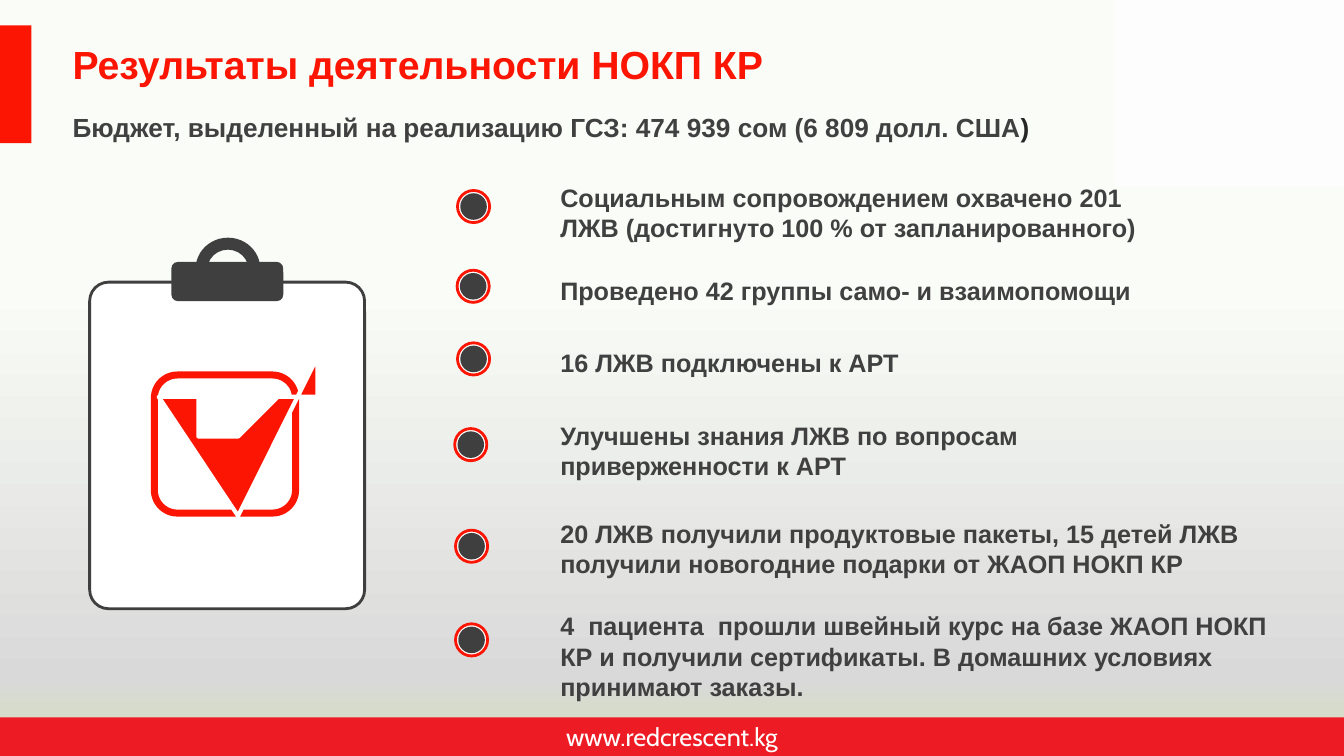
from lxml import etree
from pptx import Presentation
from pptx.dml.color import RGBColor
from pptx.enum.shapes import MSO_SHAPE
from pptx.enum.text import MSO_ANCHOR, PP_ALIGN
from pptx.oxml.ns import qn
from pptx.util import Cm, Pt

RECTANGLE = MSO_SHAPE.RECTANGLE
ROUNDED = MSO_SHAPE.ROUNDED_RECTANGLE
ARC = MSO_SHAPE.BLOCK_ARC
OVAL = MSO_SHAPE.OVAL
TOP, MIDDLE = MSO_ANCHOR.TOP, MSO_ANCHOR.MIDDLE
CENTER = PP_ALIGN.CENTER

RED = RGBColor(0xFB, 0x15, 0x02)
FOOTER_RED = RGBColor(0xED, 0x1C, 0x24)
DARK = RGBColor(0x3F, 0x3F, 0x3F)
TEXT_GRAY = RGBColor(0x40, 0x40, 0x40)
BRACKET_GRAY = RGBColor(0x26, 0x26, 0x26)
WHITE = RGBColor(0xFF, 0xFF, 0xFF)
CORNER_WHITE = RGBColor(0xFD, 0xFD, 0xFD)

BACKGROUND_STOPS = [(38, "FAFCF7"), (90, "D9D9D9"), (100, "D2E0B4"), (100, "BFBFBF")]

TITLE = "Результаты деятельности НОКП КР"
BUDGET = "Бюджет, выделенный на реализацию ГСЗ: 474 939 сом (6 809 долл. США"
WEBSITE = "www.redcrescent.kg"

# text, text top, text width, text height, ring left, ring top (cm)
RESULTS = [
    ("Социальным сопровождением охвачено 201 ЛЖВ (достигнуто 100 % от запланированного)",
     4.42, 16.26, 1.7, 11.53, 4.8),
    ("Проведено 42 группы само- и взаимопомощи", 6.76, 16.26, 1.7, 11.52, 6.81),
    ("16 ЛЖВ подключены к АРТ", 8.56, 16.26, 1.7, 11.53, 8.64),
    ("Улучшены знания ЛЖВ по вопросам приверженности к АРТ",
     10.41, 16.26, 1.7, 11.46, 10.8),
    ("20 ЛЖВ получили продуктовые пакеты, 15 детей ЛЖВ получили новогодние подарки "
     "от ЖАОП НОКП КР", 12.88, 19.15, 2.57, 11.48, 13.36),
    ("4  пациента  прошли швейный курс на базе ЖАОП НОКП КР и получили сертификаты. "
     "В домашних условиях принимают заказы.", 15.21, 19.25, 2.57, 11.48, 15.72),
]
RESULT_LEFT = 13.79
RING_SIZE, DOT_SIZE = 0.81, 0.67

# Bezier control points of the tick (cm)
TICK_RIGHT = [(5.72, 11.2), (6.32, 10.59), (8.15, 9.27), (8.38, 9.47)]
TICK_BOTTOM = (5.66, 12.64)
TICK_LEFT = [(4.14, 10.21), (4.52, 10.11), (5.18, 10.72), (5.72, 11.2)]
CURVE_STEPS = 16


def paint(shape, fill, line=None, line_width=0):
    shape.shadow.inherit = False
    shape.fill.solid()
    shape.fill.fore_color.rgb = fill
    if line is None:
        shape.line.fill.background()
    else:
        shape.line.color.rgb = line
        shape.line.width = Pt(line_width)


def add_figure(slide, kind, box, fill, line=None, line_width=0, adjustments=()):
    shape = slide.shapes.add_shape(kind, *map(Cm, box))
    for index, value in enumerate(adjustments):
        shape.adjustments[index] = value
    paint(shape, fill, line, line_width)
    return shape


def format_run(run, size, color, font="Arial", bold=True):
    run.font.name = font
    run.font.size = Pt(size)
    run.font.bold = bold
    run.font.color.rgb = color


def add_text(slide, box, text, size, color, anchor=TOP, vertical_inset=0.18):
    """Add a bold text box and return its paragraph."""
    frame = slide.shapes.add_textbox(*map(Cm, box)).text_frame
    frame.word_wrap = True
    frame.vertical_anchor = anchor
    frame.margin_left = frame.margin_right = Cm(0.33)
    frame.margin_top = frame.margin_bottom = Cm(vertical_inset)
    frame.text = text
    paragraph = frame.paragraphs[0]
    format_run(paragraph.runs[0], size, color)
    return paragraph


def curve_points(controls):
    """Return points along a cubic Bezier curve."""
    points = []
    for step in range(CURVE_STEPS + 1):
        t = step / CURVE_STEPS
        weights = ((1 - t) ** 3, 3 * t * (1 - t) ** 2, 3 * t * t * (1 - t), t ** 3)
        points.append(tuple(
            sum(weight * point[axis] for weight, point in zip(weights, controls))
            for axis in (0, 1)))
    return points


def set_background(slide):
    fill = slide.background.fill
    fill.gradient()
    fill.gradient_angle = 270
    stop_list = next(slide.background._cSld.iter(qn("a:gsLst")))
    for stop in list(stop_list):
        stop_list.remove(stop)
    for position, color in BACKGROUND_STOPS:
        stop = etree.SubElement(stop_list, qn("a:gs"), pos=str(position * 1000))
        etree.SubElement(stop, qn("a:srgbClr"), val=color)


def add_clipboard(slide):
    add_figure(slide, ROUNDED, (2.26, 7.11, 6.93, 8.23), WHITE, DARK, 2, [0.069])
    add_figure(slide, ROUNDED, (4.32, 6.6, 2.82, 0.99), DARK)
    add_figure(slide, ARC, (4.93, 5.99, 1.63, 1.57), DARK,
               adjustments=[108, 213.887, 0.193])
    add_figure(slide, ROUNDED, (3.89, 9.45, 3.56, 3.48), WHITE, RED, 5)
    points = curve_points(TICK_RIGHT) + [TICK_BOTTOM] + curve_points(TICK_LEFT)
    builder = slide.shapes.build_freeform(*points[0], scale=Cm(1))
    builder.add_line_segments(points[1:], close=True)
    paint(builder.convert_to_shape(), RED, WHITE, 3)


def add_results(slide):
    inset = (RING_SIZE - DOT_SIZE) / 2
    for text, top, width, height, ring_left, ring_top in RESULTS:
        add_figure(slide, OVAL, (ring_left, ring_top, RING_SIZE, RING_SIZE), WHITE, RED, 2)
        add_figure(slide, OVAL, (ring_left + inset, ring_top + inset, DOT_SIZE, DOT_SIZE),
                   DARK)
        add_text(slide, (RESULT_LEFT, top, width, height), text, 18, TEXT_GRAY)


def add_footer(slide):
    footer = add_figure(slide, RECTANGLE, (0, 18.08, 33.87, 0.97), FOOTER_RED)
    frame = footer.text_frame
    frame.text = WEBSITE
    frame.vertical_anchor = MIDDLE
    paragraph = frame.paragraphs[0]
    paragraph.alignment = CENTER
    format_run(paragraph.runs[0], 18, WHITE, "Cabin", False)


def main():
    presentation = Presentation()
    presentation.slide_width = Cm(33.87)
    presentation.slide_height = Cm(19.05)
    slide = presentation.slides.add_slide(presentation.slide_layouts[6])
    set_background(slide)
    add_figure(slide, RECTANGLE, (0, 0.64, 0.79, 2.97), RED)
    add_clipboard(slide)
    add_figure(slide, RECTANGLE, (28.07, 0, 5.8, 4.72), CORNER_WHITE)
    add_text(slide, (1.5, 0.64, 26.59, 1.96), TITLE, 28, RED, MIDDLE, 0.33)
    budget = add_text(slide, (1.5, 2.72, 27.41, 0.97), BUDGET, 18.7, TEXT_GRAY, MIDDLE, 0.33)
    bracket = budget.add_run()
    bracket.text = ")"
    format_run(bracket, 18.7, BRACKET_GRAY)
    add_results(slide)
    add_footer(slide)
    presentation.save("out.pptx")


if __name__ == "__main__":
    main()
